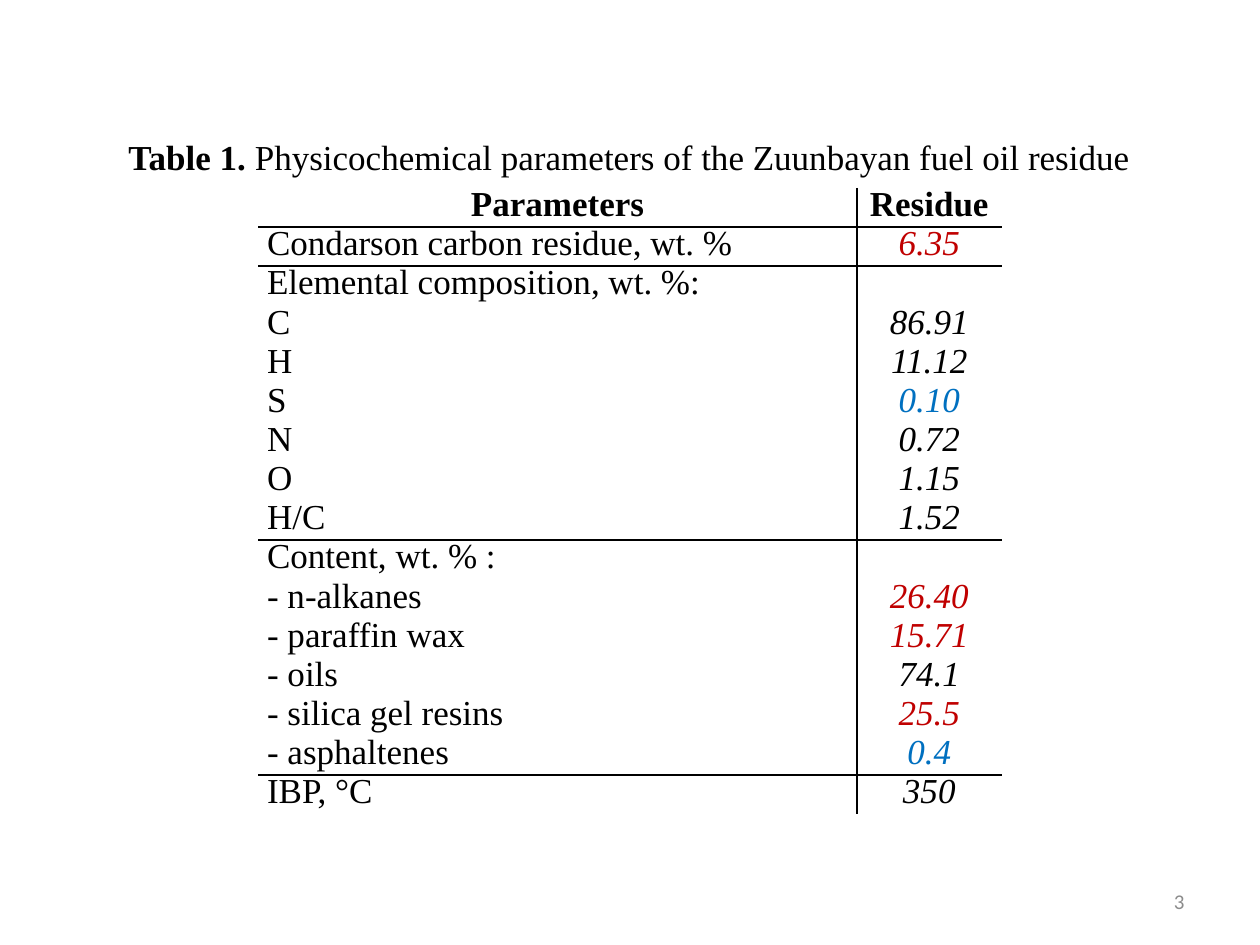
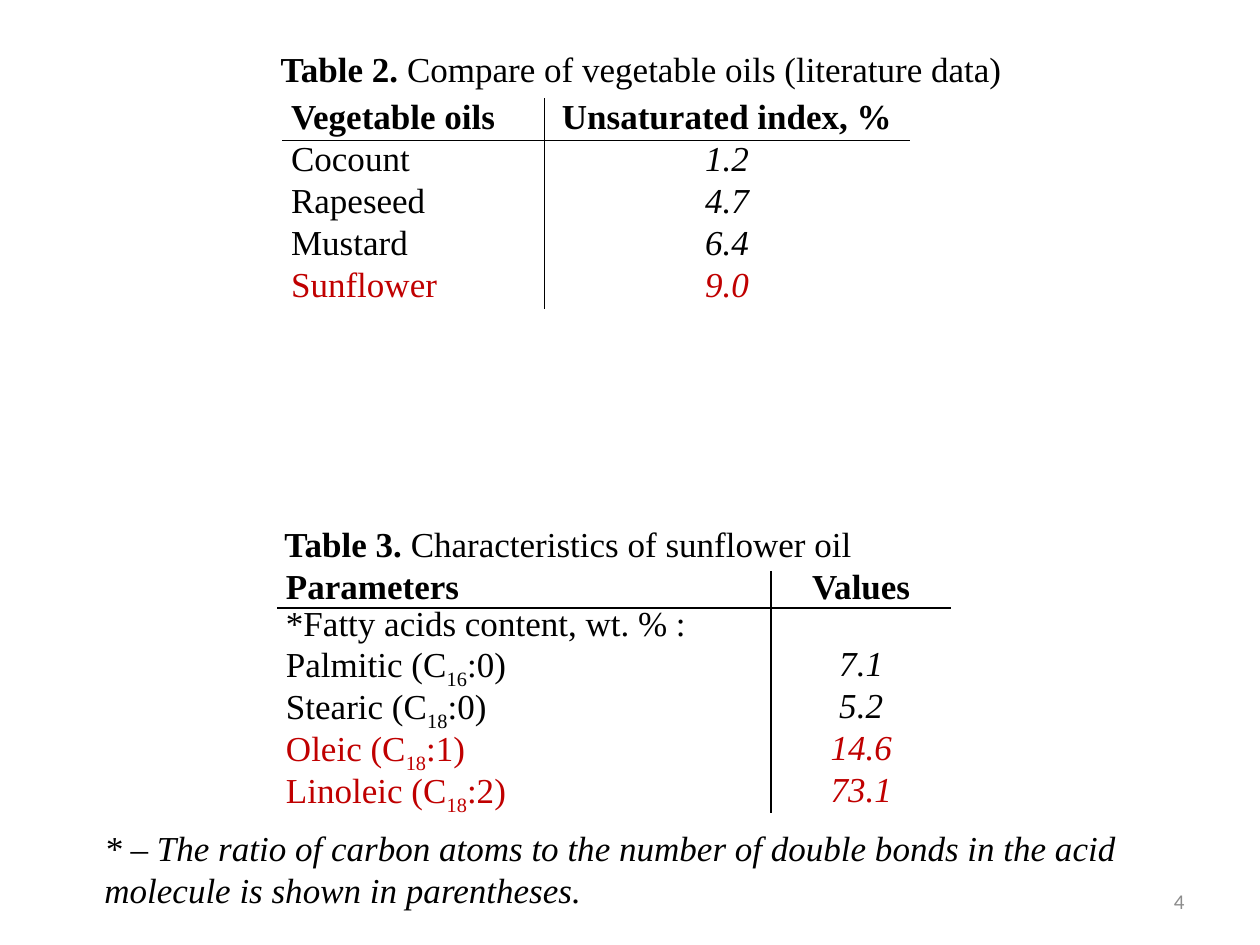
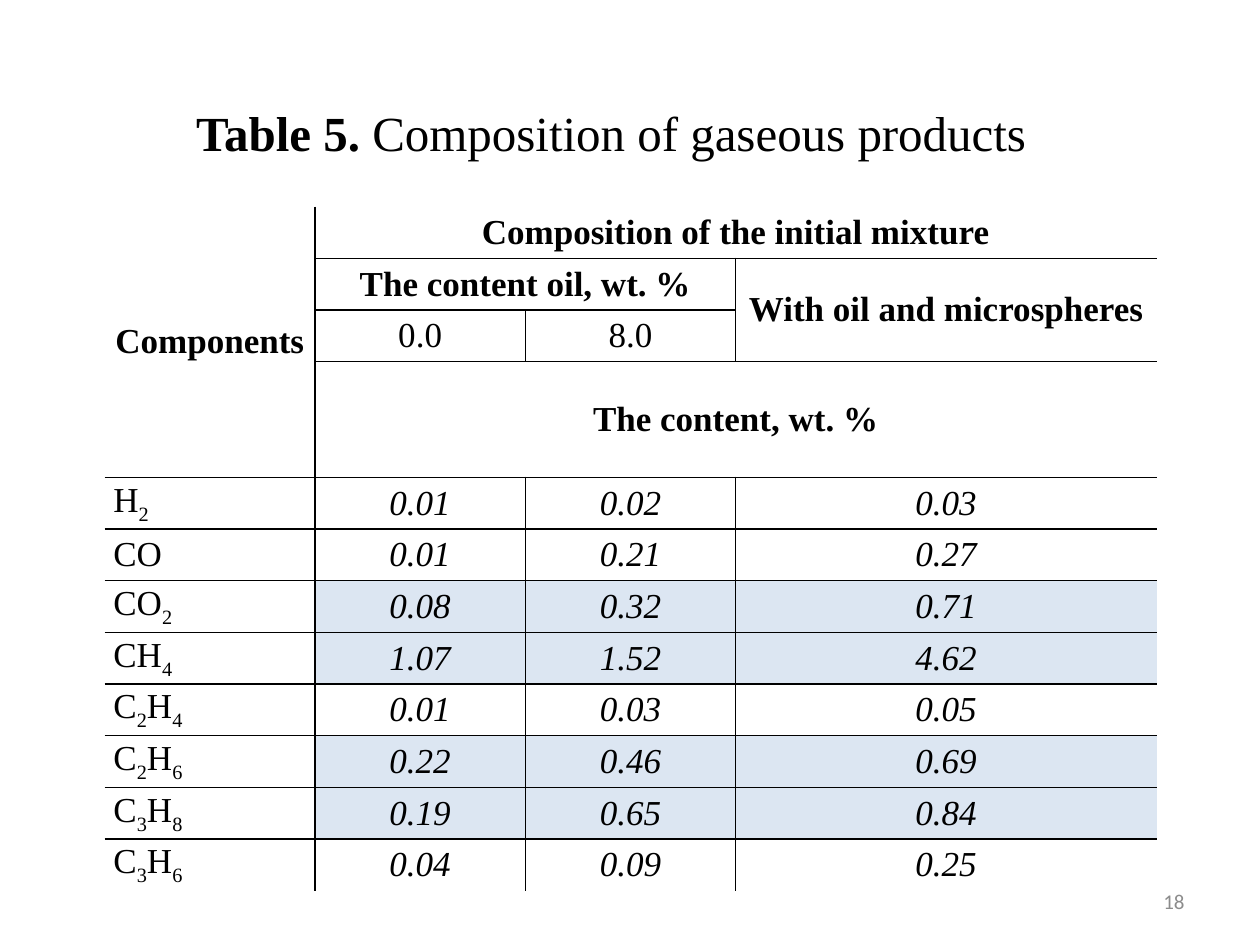
from dataclasses import dataclass, field

from lxml import etree
from pptx import Presentation
from pptx.dml.color import RGBColor
from pptx.enum.text import MSO_ANCHOR, PP_ALIGN
from pptx.oxml.ns import qn
from pptx.slide import Slide
from pptx.table import Table, _Cell
from pptx.text.text import _Paragraph
from pptx.util import Inches, Pt

BLACK = RGBColor(0x00, 0x00, 0x00)
RED = RGBColor(0xC0, 0x00, 0x00)
BLUE = RGBColor(0x00, 0x70, 0xC0)
GRAY = RGBColor(0x8C, 0x8C, 0x8C)
PALE_BLUE = RGBColor(0xDC, 0xE6, 0xF2)

LEFT, CENTER, RIGHT = PP_ALIGN.LEFT, PP_ALIGN.CENTER, PP_ALIGN.RIGHT
TOP, MIDDLE = MSO_ANCHOR.TOP, MSO_ANCHOR.MIDDLE

SERIF = "Times New Roman"
SANS = "Calibri"
BODY_SIZE = 20
EMPTY_CELL_SIZE = 12
RULE_WIDTH = Pt(1)
NO_STYLE = "{2D5ABB26-0587-4C30-8999-92F81FD0307C}"
SUBSCRIPT_MARK = "~"


@dataclass(frozen=True)
class Box:
    left: float
    top: float
    width: float
    height: float


@dataclass(frozen=True)
class Caption:
    label: str
    title: str
    box: Box
    size: int = BODY_SIZE


@dataclass(frozen=True)
class DataTable:
    left: float
    top: float
    column_widths: list[float]
    row_heights: list[float]
    rows: list[list[str]]
    rules_below: set[int]
    header_rows: int = 1
    header_alignment: PP_ALIGN = LEFT
    anchor: MSO_ANCHOR = MIDDLE
    line_spacing: float | None = None
    colors: dict[tuple[int, int], RGBColor] = field(default_factory=dict)
    shaded_rows: set[int] = field(default_factory=set)
    merges: list[tuple[int, int, int, int]] = field(default_factory=list)


@dataclass(frozen=True)
class Page:
    number: int
    captions: list[Caption]
    tables: list[DataTable]
    footnote: str = ""


RESIDUE = DataTable(
    2.05, 1.49, [4.75, 1.15], [0.3] * 16,
    [
        ["Parameters", "Residue"],
        ["Condarson carbon residue, wt. %", "6.35"],
        ["Elemental composition, wt. %:", ""],
        ["С", "86.91"],
        ["H", "11.12"],
        ["S", "0.10"],
        ["N", "0.72"],
        ["O", "1.15"],
        ["Н/С", "1.52"],
        ["Content, wt. % :", ""],
        ["- n-alkanes", "26.40"],
        ["- paraffin wax", "15.71"],
        ["- oils", "74.1"],
        ["- silica gel resins", "25.5"],
        ["- asphaltenes", "0.4"],
        ["IBP, °C", "350"],
    ],
    rules_below={0, 1, 8, 14},
    header_alignment=CENTER,
    anchor=TOP,
    line_spacing=0.93,
    colors={(row, 1): RED for row in (1, 10, 11, 13)} | {(row, 1): BLUE for row in (5, 14)},
)

VEGETABLE_OILS = DataTable(
    2.24, 0.78, [2.08, 2.9], [0.33] * 5,
    [
        ["Vegetable oils", "Unsaturated index, %"],
        ["Cocount", "1.2"],
        ["Rapeseed", "4.7"],
        ["Mustard", "6.4"],
        ["Sunflower", "9.0"],
    ],
    rules_below={0},
    anchor=TOP,
    colors={(4, column): RED for column in range(2)},
)

SUNFLOWER_OIL = DataTable(
    2.2, 4.53, [3.92, 1.43], [0.29] * 2 + [0.33] * 4,
    [
        ["Parameters", "Values"],
        ["*Fatty acids content, wt. % :", ""],
        ["Palmitic (C~16~:0)", "7.1"],
        ["Stearic (C~18~:0)", "5.2"],
        ["Oleic (C~18~:1)", "14.6"],
        ["Linoleic (C~18~:2)", "73.1"],
    ],
    rules_below={0},
    line_spacing=0.88,
    colors={(row, column): RED for row in (4, 5) for column in range(2)},
)

GASEOUS_PRODUCTS = DataTable(
    0.83, 1.64, [1.67, 1.67, 1.67, 3.34], [0.41] * 3 + [0.92] + [0.41] * 8,
    [
        ["Components", "Composition of the initial mixture", "", ""],
        ["", "The content oil, wt. %", "", "With oil and microspheres"],
        ["", "0.0", "8.0", ""],
        ["", "The content, wt. %", "", ""],
        ["H~2", "0.01", "0.02", "0.03"],
        ["CO", "0.01", "0.21", "0.27"],
        ["CO~2", "0.08", "0.32", "0.71"],
        ["CH~4", "1.07", "1.52", "4.62"],
        ["C~2~H~4", "0.01", "0.03", "0.05"],
        ["C~2~H~6", "0.22", "0.46", "0.69"],
        ["C~3~H~8", "0.19", "0.65", "0.84"],
        ["C~3~H~6", "0.04", "0.09", "0.25"],
    ],
    rules_below=set(range(11)),
    header_rows=4,
    header_alignment=CENTER,
    shaded_rows={6, 7, 9, 10},
    merges=[(0, 0, 3, 0), (0, 1, 0, 3), (1, 1, 1, 2), (1, 3, 2, 3), (3, 1, 3, 3)],
)

PAGES = [
    Page(
        3,
        [Caption("Table 1. ", "Physicochemical parameters of the Zuunbayan fuel oil residue",
                 Box(0.35, 1.07, 9.29, 0.34))],
        [RESIDUE],
    ),
    Page(
        4,
        [
            Caption("Table 2. ", "Compare of vegetable oils (literature data)",
                    Box(0.59, 0.31, 9, 0.47)),
            Caption("Table 3. ", "Characteristics of sunflower oil", Box(0.01, 4.12, 9, 0.38)),
        ],
        [VEGETABLE_OILS, SUNFLOWER_OIL],
        "* – The ratio of carbon atoms to the number of double bonds in the acid "
        "molecule is shown in parentheses.",
    ),
    Page(
        18,
        [Caption("Table 5. ", "Composition of gaseous products", Box(0.35, 0.87, 9, 0.36), 28)],
        [GASEOUS_PRODUCTS],
    ),
]

NUMBER_BOX = Box(7.17, 6.95, 2.33, 0.4)
FOOTNOTE_BOX = Box(0.73, 6.51, 8.28, 0.77)


def add_run(paragraph: _Paragraph, text: str, size: int = BODY_SIZE, color: RGBColor = BLACK,
            bold: bool = False, italic: bool = False, font_name: str = SERIF,
            subscript: bool = False) -> None:
    run = paragraph.add_run()
    run.text = text
    font = run.font
    font.name = font_name
    font.size = Pt(size)
    font.bold = bold
    font.italic = italic
    font.color.rgb = color
    if subscript:
        run._r.get_or_add_rPr().set("baseline", "-25000")


def add_text_box(slide: Slide, box: Box, alignment: PP_ALIGN,
                 anchor: MSO_ANCHOR = MIDDLE) -> _Paragraph:
    shape = slide.shapes.add_textbox(Inches(box.left), Inches(box.top),
                                     Inches(box.width), Inches(box.height))
    shape.text_frame.word_wrap = True
    shape.text_frame.vertical_anchor = anchor
    paragraph = shape.text_frame.paragraphs[0]
    paragraph.alignment = alignment
    return paragraph


def add_caption(slide: Slide, caption: Caption) -> None:
    paragraph = add_text_box(slide, caption.box, CENTER)
    add_run(paragraph, caption.label, caption.size, bold=True)
    add_run(paragraph, caption.title, caption.size)


def add_borders(cell: _Cell, sides: dict[str, bool]) -> None:
    properties = cell._tc.get_or_add_tcPr()
    for tag, visible in sides.items():
        line = etree.SubElement(properties, qn(tag), w=str(RULE_WIDTH))
        if visible:
            fill = etree.SubElement(line, qn("a:solidFill"))
            etree.SubElement(fill, qn("a:srgbClr"), val=str(BLACK))
        else:
            etree.SubElement(line, qn("a:noFill"))


def fill_cell(table: Table, data: DataTable, row: int, column: int) -> None:
    cell = table.cell(row, column)
    cell.margin_left = cell.margin_right = Inches(0.07)
    cell.margin_top = cell.margin_bottom = 0
    cell.vertical_anchor = data.anchor
    if cell.is_spanned:
        return
    last_row = row + cell.span_height - 1
    last_column = column + cell.span_width - 1
    add_borders(cell, {
        "a:lnL": column > 0,
        "a:lnR": last_column < len(data.column_widths) - 1,
        "a:lnT": row - 1 in data.rules_below,
        "a:lnB": last_row in data.rules_below,
    })
    if column > 0 and row in data.shaded_rows:
        cell.fill.solid()
        cell.fill.fore_color.rgb = PALE_BLUE
    else:
        cell.fill.background()

    text = data.rows[row][column]
    is_header = row < data.header_rows
    paragraph = cell.text_frame.paragraphs[0]
    paragraph.line_spacing = data.line_spacing
    if not text:
        etree.SubElement(paragraph._p, qn("a:endParaRPr"), sz=str(EMPTY_CELL_SIZE * 100))
        return
    if column > 0:
        paragraph.alignment = CENTER
    else:
        paragraph.alignment = data.header_alignment if is_header else LEFT
    for index, part in enumerate(text.split(SUBSCRIPT_MARK)):
        if part:
            add_run(paragraph, part, color=data.colors.get((row, column), BLACK),
                    bold=is_header and not part[0].isdigit(),
                    italic=column > 0 and not is_header,
                    subscript=index % 2 == 1)


def add_data_table(slide: Slide, data: DataTable) -> None:
    frame = slide.shapes.add_table(
        len(data.rows), len(data.column_widths), Inches(data.left), Inches(data.top),
        Inches(sum(data.column_widths)), Inches(sum(data.row_heights)))
    table = frame.table
    table.first_row = table.horz_banding = False
    table._tbl.tblPr.find(qn("a:tableStyleId")).text = NO_STYLE
    for column, width in zip(table.columns, data.column_widths):
        column.width = Inches(width)
    for row, height in zip(table.rows, data.row_heights):
        row.height = Inches(height)
    for first_row, first_column, last_row, last_column in data.merges:
        table.cell(first_row, first_column).merge(table.cell(last_row, last_column))
    for row in range(len(data.rows)):
        for column in range(len(data.column_widths)):
            fill_cell(table, data, row, column)


def add_page(presentation: Presentation, page: Page) -> None:
    slide = presentation.slides.add_slide(presentation.slide_layouts[6])
    for caption in page.captions:
        add_caption(slide, caption)
    for data in page.tables:
        add_data_table(slide, data)
    if page.footnote:
        paragraph = add_text_box(slide, FOOTNOTE_BOX, LEFT, TOP)
        add_run(paragraph, page.footnote, italic=True)
    number = add_text_box(slide, NUMBER_BOX, RIGHT)
    add_run(number, str(page.number), 12, GRAY, font_name=SANS)


def main() -> None:
    presentation = Presentation()
    presentation.slide_width = Inches(10)
    presentation.slide_height = Inches(7.5)
    for page in PAGES:
        add_page(presentation, page)
    presentation.save("out.pptx")


if __name__ == "__main__":
    main()
